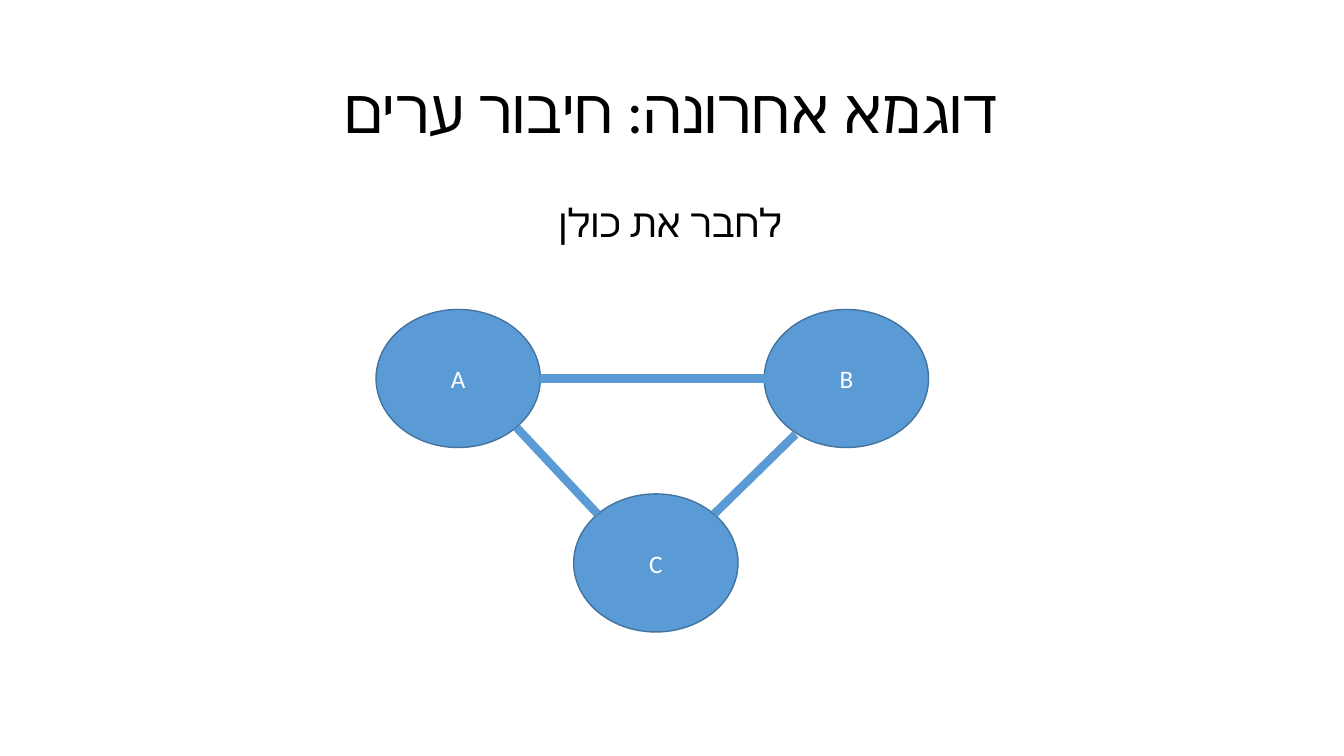
from lxml.etree import SubElement
from pptx import Presentation
from pptx.dml.color import RGBColor
from pptx.enum.shapes import MSO_CONNECTOR as Line, MSO_SHAPE as Shape
from pptx.enum.text import MSO_ANCHOR as Anchor, PP_ALIGN as Align
from pptx.oxml.ns import qn
from pptx.util import Inches, Pt

BLACK = RGBColor(0x00, 0x00, 0x00)
WHITE = RGBColor(0xFF, 0xFF, 0xFF)
BLUE = RGBColor(0x5B, 0x9B, 0xD5)
EDGE = RGBColor(0x43, 0x73, 0x9E)
FONT = "Calibri"

# text, box, size, alignment, anchor, space before
TEXTS = [
    ("דוגמא אחרונה: חיבור ערים", (0.92, 0.4, 11.5, 1.45), 44,
     Align.CENTER, Anchor.MIDDLE, 0),
    ("לחבר את כולן", (5.15, 1.97, 2.71, 0.66), 28,
     Align.RIGHT, Anchor.TOP, 10),
]
CITY_W, CITY_H = 1.63, 1.37
CITIES = {"A": (3.73, 3.07), "B": (7.58, 3.07), "C": (5.69, 4.9)}
# Each end is a city and an offset from its centre, in radii
DIAG = 0.71
ROADS = [
    (("A", 1, 0), ("B", -0.85, 0)),
    (("A", DIAG, DIAG), ("C", -DIAG, -DIAG)),
    (("B", -0.62, 0.81), ("C", DIAG, -DIAG)),
]


def write(shape, text, size, color, align, anchor):
    """Fill a shape with one right-to-left paragraph and return it."""
    frame = shape.text_frame
    frame.word_wrap = True
    frame.vertical_anchor = anchor
    para = frame.paragraphs[0]
    para.text = text
    para.alignment = align
    font = para.font
    font.size = Pt(size)
    font.color.rgb = color
    font.name = FONT
    props = para._p.get_or_add_pPr()
    props.set("rtl", "1")
    SubElement(props.find(qn("a:defRPr")), qn("a:cs"), typeface=FONT)
    return para


def add_city(slide, name, left, top):
    city = slide.shapes.add_shape(
        Shape.OVAL, *map(Inches, (left, top, CITY_W, CITY_H)))
    city.shadow.inherit = False
    city.fill.solid()
    city.fill.fore_color.rgb = BLUE
    city.line.color.rgb = EDGE
    city.line.width = Pt(1)
    write(city, name, 18, WHITE, Align.CENTER, Anchor.MIDDLE)


def locate(name, dx, dy):
    left, top = CITIES[name]
    return (Inches(left + CITY_W / 2 * (1 + dx)),
            Inches(top + CITY_H / 2 * (1 + dy)))


def add_road(slide, start, end):
    road = slide.shapes.add_connector(
        Line.STRAIGHT, *locate(*start), *locate(*end))
    road.line.color.rgb = BLUE
    road.line.width = Pt(6)
    SubElement(road._element.spPr, qn("a:effectLst"))


def main():
    deck = Presentation()
    deck.slide_width, deck.slide_height = Inches(13.33), Inches(7.5)
    slide = deck.slides.add_slide(deck.slide_layouts[6])
    for text, box, size, align, anchor, before in TEXTS:
        shape = slide.shapes.add_textbox(*map(Inches, box))
        para = write(shape, text, size, BLACK, align, anchor)
        para.line_spacing = 0.9
        para.space_before = Pt(before)
    for name, (left, top) in CITIES.items():
        add_city(slide, name, left, top)
    for start, end in ROADS:
        add_road(slide, start, end)
    deck.save("out.pptx")


if __name__ == "__main__":
    main()
